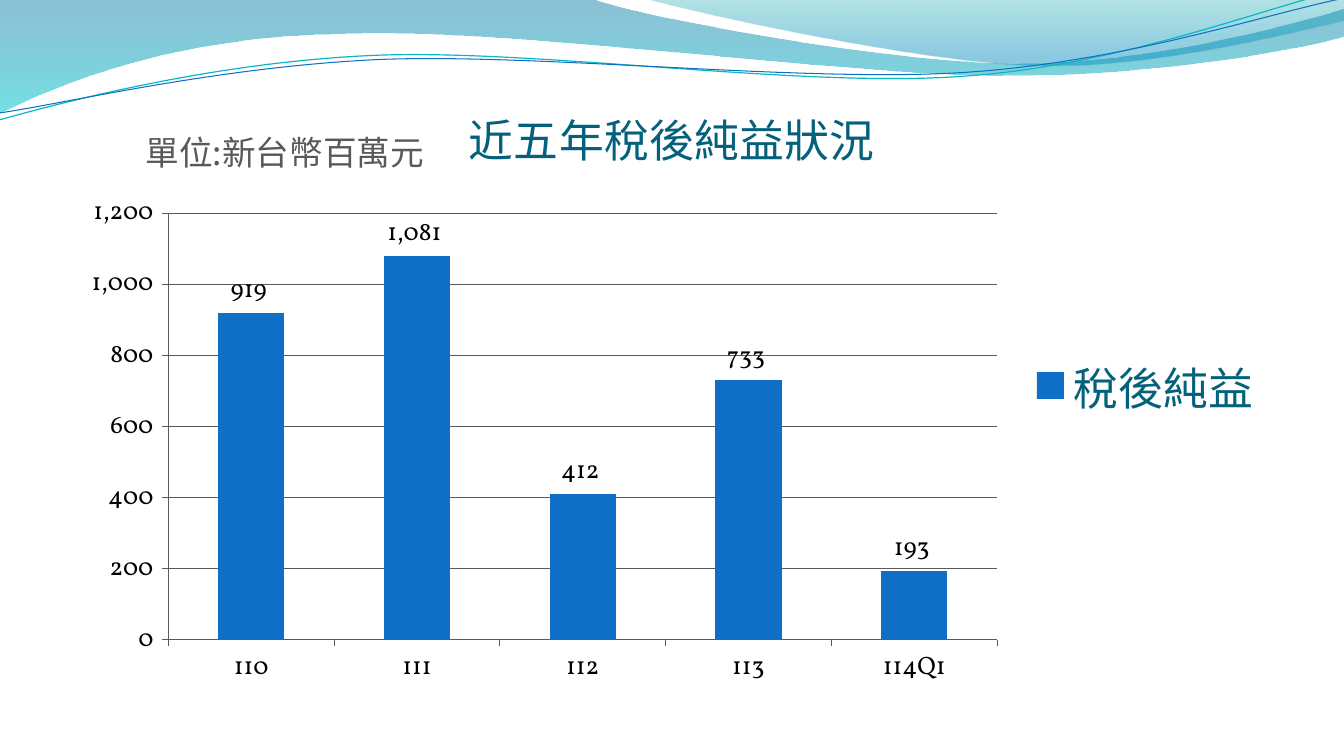
import lxml.etree
import pptx
import pptx.chart.data
import pptx.dml.color
import pptx.enum.chart
import pptx.enum.text
import pptx.oxml
import pptx.oxml.ns
import pptx.util

Inches, Pt = pptx.util.Inches, pptx.util.Pt
RGBColor = pptx.dml.color.RGBColor
qn = pptx.oxml.ns.qn

BLACK = RGBColor(0x00, 0x00, 0x00)
GREY = RGBColor(0x59, 0x59, 0x59)
TEAL = RGBColor(0x04, 0x61, 0x7B)
BLUE = RGBColor(0x0F, 0x6F, 0xC6)
TURQUOISE = RGBColor(0x0A, 0xB8, 0xBF)
DEEP_BLUE = RGBColor(0x00, 0x74, 0xA1)
CYAN = RGBColor(0x00, 0xC6, 0xCF)
SEA_GREEN = RGBColor(0x00, 0xA1, 0xA9)
SKY_BLUE = RGBColor(0x00, 0x8B, 0xBF)

CJK_FONT = "Noto Sans CJK SC"
NUMBER_FONT = "Vollkorn"
CHART_WIDTH, CHART_HEIGHT = 12, 6.19

# Each wave is a start point, then line ends (2 numbers) or Bezier curves (6 numbers).
LEFT_WAVE = [(0, 0), (5.87, -0.01), (6.34, 0.17, 8.85, 0.63, 10.11, 0.63),
             (11.38, 0.63, 12.78, 0.26, 13.33, 0.09), (13.35, 0.36),
             (13.11, 0.44, 11.6, 0.76, 9.94, 0.75), (8.29, 0.75, 5.09, 0.28, 3.43, 0.34),
             (1.72, 0.36, 0.61, 0.83, -0.01, 1.13), (0, 0)]
RIGHT_WAVE = [(6.39, -0.01), (6.79, 0.11, 9.09, 0.62, 10.25, 0.65),
              (11.41, 0.69, 12.82, 0.32, 13.33, 0.21), (13.33, 0), (6.39, -0.01)]
TURQUOISE_LINE = [(-0.01, 1.19), (0.64, 1.01, 2.11, 0.62, 3.69, 0.55),
                  (5.27, 0.48, 7.9, 0.87, 9.5, 0.76), (11.1, 0.66, 12.52, 0.08, 13.31, -0.1)]
BLUE_LINE = [(0, 1.12), (0.63, 1.03, 2.18, 0.66, 3.78, 0.59),
             (5.37, 0.53, 7.96, 0.82, 9.55, 0.72), (11.15, 0.62, 12.55, 0.14, 13.34, -0.02)]


def add_wave(slide, segments, close):
    """Draw straight segments through all points, then turn triples into curves."""
    points = [(Inches(seg[i]), Inches(seg[i + 1]))
              for seg in segments for i in range(0, len(seg), 2)]
    builder = slide.shapes.build_freeform(*points[0])
    builder.add_line_segments(points[1:], close=close)
    s = builder.convert_to_shape()
    s.shadow.inherit = False
    lines = iter(list(s._element.spPr.iter(qn("a:lnTo"))))
    for seg in segments[1:]:
        first = next(lines)
        if len(seg) == 6:
            curve = lxml.etree.Element(qn("a:cubicBezTo"))
            first.addprevious(curve)
            for line in (first, next(lines), next(lines)):
                curve.append(line[0])
                line.getparent().remove(line)
    return s


def add_gradient_wave(slide, segments, stops):
    """Draw a filled wave; stops holds (position, colour, opacity in percent)."""
    s = add_wave(slide, segments, close=True)
    s.line.fill.background()
    s.fill.gradient()
    s.fill.gradient_angle = 270
    for stop, (position, color, _) in zip(s.fill.gradient_stops, stops):
        stop.position = position
        stop.color.rgb = color
    colors = s._element.spPr.iter(qn("a:srgbClr"))
    for clr, (_, _, opacity) in zip(colors, stops):
        lxml.etree.SubElement(clr, qn("a:alpha")).set("val", str(opacity * 1000))


def add_line_wave(slide, segments, color, width):
    s = add_wave(slide, segments, close=False)
    s.fill.background()
    s.line.color.rgb = color
    s.line.width = Pt(width)


def format_font(font, size, color, name):
    font.size = Pt(size)
    font.bold = False
    font.color.rgb = color
    font.name = name
    ea = pptx.oxml.parse_xml('<a:ea %s typeface="%s"/>' % (pptx.oxml.ns.nsdecls("a"), name))
    font._rPr.find(qn("a:latin")).addnext(ea)


def write_text(tf, text, size=24, color=GREY, name=CJK_FONT):
    p = tf.paragraphs[0]
    p.alignment = pptx.enum.text.PP_ALIGN.CENTER
    r = p.add_run()
    r.text = text
    format_font(r.font, size, color, name)


def place_manually(element, index, x, y, w=None, h=None):
    """Fix a chart part's place, in inches from the chart's corner."""
    for old in element.findall(qn("c:layout")):
        element.remove(old)
    layout = lxml.etree.Element(qn("c:layout"))
    manual = lxml.etree.SubElement(layout, qn("c:manualLayout"))
    settings = {"layoutTarget": "inner"} if w else {}
    settings.update(xMode="edge", yMode="edge", x=x / CHART_WIDTH, y=y / CHART_HEIGHT)
    if w:
        settings.update(w=w / CHART_WIDTH, h=h / CHART_HEIGHT)
    for tag, value in settings.items():
        lxml.etree.SubElement(manual, qn("c:" + tag)).set("val", str(value))
    element.insert(index, layout)


def format_line(line):
    line.color.rgb = GREY
    line.width = Pt(0.75)


def format_axis(axis):
    axis.major_tick_mark = pptx.enum.chart.XL_TICK_MARK.OUTSIDE
    axis.minor_tick_mark = pptx.enum.chart.XL_TICK_MARK.NONE
    format_line(axis.format.line)


def format_numbers(labels):
    labels.number_format = "#,##0_ "
    labels.number_format_is_linked = False


def add_profit_chart(slide):
    data = pptx.chart.data.CategoryChartData()
    data.categories = ["110", "111", "112", "113", "114Q1"]
    data.add_series("稅後純益", (919, 1081, 412, 733, 193))
    chart = slide.shapes.add_chart(
        pptx.enum.chart.XL_CHART_TYPE.COLUMN_CLUSTERED, Inches(0.67), Inches(0.73),
        Inches(CHART_WIDTH), Inches(CHART_HEIGHT), data).chart
    format_font(chart.font, 18, BLACK, NUMBER_FONT)

    chart.has_title = True
    write_text(chart.chart_title.text_frame, "近五年稅後純益狀況", size=32, color=TEAL)
    place_manually(chart.chart_title._element, 1, x=3.9, y=0.18)
    place_manually(chart._chartSpace.chart.plotArea, 0, x=1, y=1.39, w=8.22, h=4.23)

    chart.has_legend = True
    chart.legend.position = pptx.enum.chart.XL_LEGEND_POSITION.RIGHT
    chart.legend.include_in_layout = False
    format_font(chart.legend.font, 32, TEAL, CJK_FONT)

    format_axis(chart.category_axis)
    values = chart.value_axis
    format_axis(values)
    values.minimum_scale, values.maximum_scale, values.major_unit = 0, 1200, 200
    format_numbers(values.tick_labels)
    format_line(values.major_gridlines.format.line)

    plot = chart.plots[0]
    plot.gap_width = 150
    plot.vary_by_categories = False
    plot.series[0].format.fill.solid()
    plot.series[0].format.fill.fore_color.rgb = BLUE
    plot.has_data_labels = True
    plot.data_labels.show_value = True
    format_numbers(plot.data_labels)
    plot.data_labels.position = pptx.enum.chart.XL_LABEL_POSITION.OUTSIDE_END


def add_unit_note(slide):
    box = slide.shapes.add_textbox(Inches(1.22), Inches(1.26), Inches(3.21), Inches(0.48))
    box.text_frame.word_wrap = True
    write_text(box.text_frame, "單位:新台幣百萬元")


def main():
    prs = pptx.Presentation()
    prs.slide_width, prs.slide_height = Inches(13.33), Inches(7.5)
    slide = prs.slides.add_slide(prs.slide_layouts[6])
    add_gradient_wave(slide, LEFT_WAVE, [(0, DEEP_BLUE, 45), (1, CYAN, 55)])
    add_gradient_wave(slide, RIGHT_WAVE, [(0, SEA_GREEN, 30), (0.8, SKY_BLUE, 45)])
    add_line_wave(slide, TURQUOISE_LINE, TURQUOISE, 0.85)
    add_line_wave(slide, BLUE_LINE, BLUE, 0.75)
    add_profit_chart(slide)
    add_unit_note(slide)
    prs.save("out.pptx")


if __name__ == "__main__":
    main()
